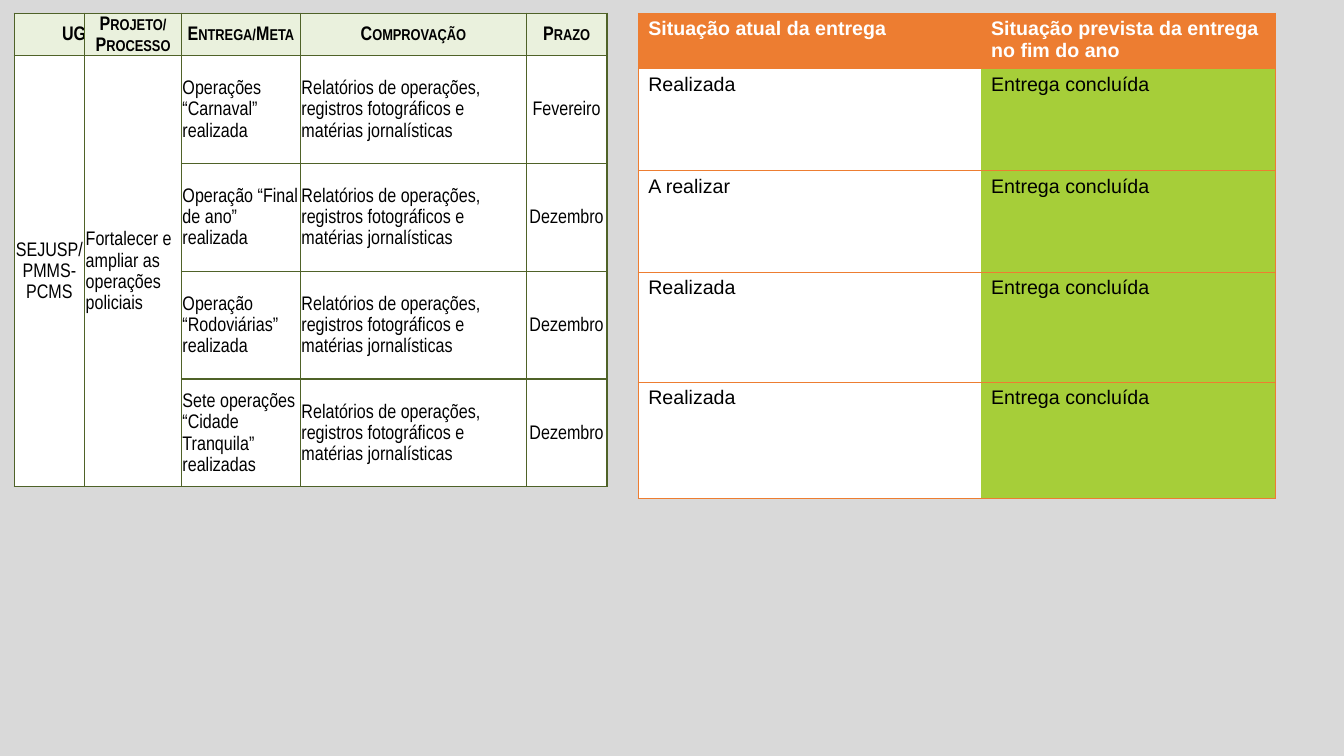
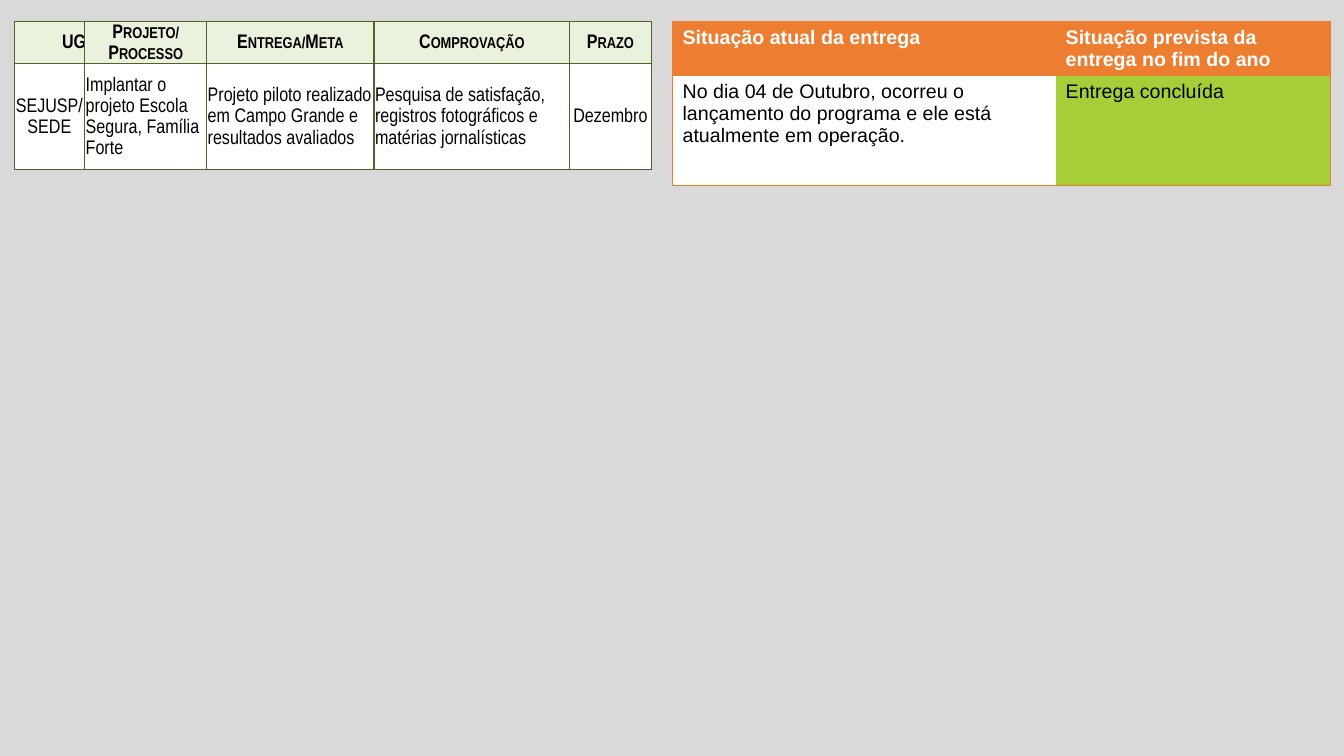
import pptx
import pptx.dml.color
import pptx.enum.shapes
import pptx.enum.text
import pptx.oxml
import pptx.oxml.ns
import pptx.util

Inches, Pt = pptx.util.Inches, pptx.util.Pt
RGB = pptx.dml.color.RGBColor
ALIGN = pptx.enum.text.PP_ALIGN
ANCHOR = pptx.enum.text.MSO_ANCHOR

# Colours
BACKDROP = RGB(0xD9, 0xD9, 0xD9)
DARK_GREEN = RGB(0x4F, 0x62, 0x28)
PALE_GREEN = RGB(0xEA, 0xF1, 0xDD)
DONE_GREEN = RGB(0xA6, 0xCE, 0x39)
ORANGE = RGB(0xED, 0x7D, 0x31)
WHITE = RGB(0xFF, 0xFF, 0xFF)
BLACK = RGB(0x00, 0x00, 0x00)

# Text formats
PLAN_HEAD = {"name": "Arial Narrow", "size": Pt(14), "bold": True}
PLAN_BODY = {**PLAN_HEAD, "bold": False}
STATUS_HEAD = {"name": "Arial", "size": Pt(14), "bold": True}
STATUS_BODY = {**STATUS_HEAD, "bold": False}
PLAN_CELL = {
    "vertical_anchor": ANCHOR.MIDDLE,
    "margin_left": Inches(0.01),
    "margin_right": Inches(0.01),
    "margin_top": 0,
    "margin_bottom": 0,
}

# Shared wording
PLAN_TITLES = ["UG", "Projeto/Processo", "Entrega/Meta", "Comprovação", "Prazo"]
STATUS_TITLES = ["Situação atual da entrega", "Situação prevista da entrega no fim do ano"]
REPORTS = "Relatórios de operações, registros fotográficos e matérias jornalísticas"
DONE = "Entrega concluída"
CENTRED_COLUMNS = (0, 4)


def apply(target, formats):
    for name, value in formats.items():
        setattr(target, name, value)


def set_border(cell, side, color, width):
    """Draw one cell edge (L, R, T or B); no colour means no line."""
    paint = f'<a:solidFill><a:srgbClr val="{color}"/></a:solidFill>' if color else "<a:noFill/>"
    cell._tc.get_or_add_tcPr().append(pptx.oxml.parse_xml(
        f'<a:ln{side} {pptx.oxml.ns.nsdecls("a")} w="{Pt(width)}">{paint}</a:ln{side}>'))


def fill_cell(cell, color):
    cell.fill.solid()
    cell.fill.fore_color.rgb = color


def write(cell, text, font, color, small_caps=False, **paragraph_format):
    cell.text_frame.text = text
    for paragraph in cell.text_frame.paragraphs:
        apply(paragraph, paragraph_format)
        for run in paragraph.runs:
            apply(run.font, font)
            run.font.color.rgb = color
            if small_caps:
                run._r.get_or_add_rPr().set("cap", "small")


def new_table(slide, left, top, columns, rows):
    table = slide.shapes.add_table(
        len(rows), len(columns), Inches(left), Inches(top),
        Inches(sum(columns)), Inches(sum(rows))).table
    apply(table, {"first_row": False, "horz_banding": False})
    for column, width in zip(table.columns, columns):
        column.width = Inches(width)
    for row, height in zip(table.rows, rows):
        row.height = Inches(height)
    return table


def plan_table(slide, left, top, columns, rows, unit, project, deliveries):
    """Planned deliveries of one unit and project."""
    table = new_table(slide, left, top, columns, rows)
    lines = [PLAN_TITLES] + [[unit, project, *delivery] for delivery in deliveries]
    for r, line in enumerate(lines):
        for c, text in enumerate(line):
            cell = table.cell(r, c)
            apply(cell, PLAN_CELL)
            for side in "LRTB":
                set_border(cell, side, DARK_GREEN, 1)
            fill_cell(cell, WHITE if r else PALE_GREEN)
            if r > 1 and c < 2:
                continue  # covered by the merged unit and project cells
            centred = r == 0 or c in CENTRED_COLUMNS
            write(cell, text, PLAN_BODY if r else PLAN_HEAD, BLACK, small_caps=r == 0,
                  alignment=ALIGN.CENTER if centred else ALIGN.LEFT, line_spacing=1.15)
    table.cell(0, 0).margin_left = Inches(0.26)
    if len(deliveries) > 1:
        for c in range(2):
            table.cell(1, c).merge(table.cell(len(deliveries), c))


def status_table(slide, left, top, columns, rows, situations):
    """Current and expected situation of each delivery."""
    table = new_table(slide, left, top, columns, rows)
    lines = [STATUS_TITLES] + [[situation, DONE] for situation in situations]
    for r, line in enumerate(lines):
        for c, text in enumerate(line):
            cell = table.cell(r, c)
            # Outer frame and row rules, with nothing between the columns
            edges = {"L": c == 0, "R": c == 1, "T": True, "B": True}
            for side, shown in edges.items():
                set_border(cell, side, ORANGE if shown else None, 0.5)
            fill_cell(cell, (WHITE, DONE_GREEN)[c] if r else ORANGE)
            write(cell, text, STATUS_BODY if r else STATUS_HEAD, BLACK if r else WHITE)


def new_slide(deck):
    """Blank slide with the grey backdrop."""
    slide = deck.slides.add_slide(deck.slide_layouts[6])
    backdrop = slide.shapes.add_shape(
        pptx.enum.shapes.MSO_SHAPE.RECTANGLE, 0, 0, deck.slide_width, deck.slide_height)
    backdrop.shadow.inherit = False
    backdrop.fill.solid()
    backdrop.fill.fore_color.rgb = BACKDROP
    backdrop.line.color.rgb = BACKDROP
    backdrop.line.width = Pt(1)
    return slide


def main():
    deck = pptx.Presentation()
    deck.slide_width, deck.slide_height = Inches(13.33), Inches(7.5)

    # Police operations
    slide = new_slide(deck)
    plan_table(
        slide, 0.14, 0.13, [0.7, 0.96, 1.18, 2.24, 0.8], [0.42] + [1.07] * 4,
        "SEJUSP/\nPMMS-PCMS", "Fortalecer e ampliar as operações policiais",
        [("Operações “Carnaval” realizada", REPORTS, "Fevereiro"),
         ("Operação “Final de ano” realizada", REPORTS, "Dezembro"),
         ("Operação “Rodoviárias” realizada", REPORTS, "Dezembro"),
         ("Sete operações “Cidade Tranquila” realizadas", REPORTS, "Dezembro")])
    status_table(slide, 6.33, 0.13, [3.4, 2.92], [0.55, 1.01, 1.01, 1.09, 1.15],
                 ["Realizada", "A realizar", "Realizada", "Realizada"])

    # Safe school project
    slide = new_slide(deck)
    plan_table(
        slide, 0.14, 0.21, [0.7, 1.21, 1.66, 1.94, 0.81], [0.42, 1.05],
        "SEJUSP/\nSEDE", "Implantar o projeto Escola Segura, Família Forte",
        [("Projeto piloto realizado em Campo Grande e resultados avaliados",
          "Pesquisa de satisfação, registros fotográficos e matérias jornalísticas",
          "Dezembro")])
    status_table(slide, 6.67, 0.21, [3.8, 2.72], [0.54, 1.09],
                 ["No dia 04 de Outubro, ocorreu o lançamento do programa "
                  "e ele está atualmente em operação."])

    deck.save("out.pptx")


if __name__ == "__main__":
    main()
